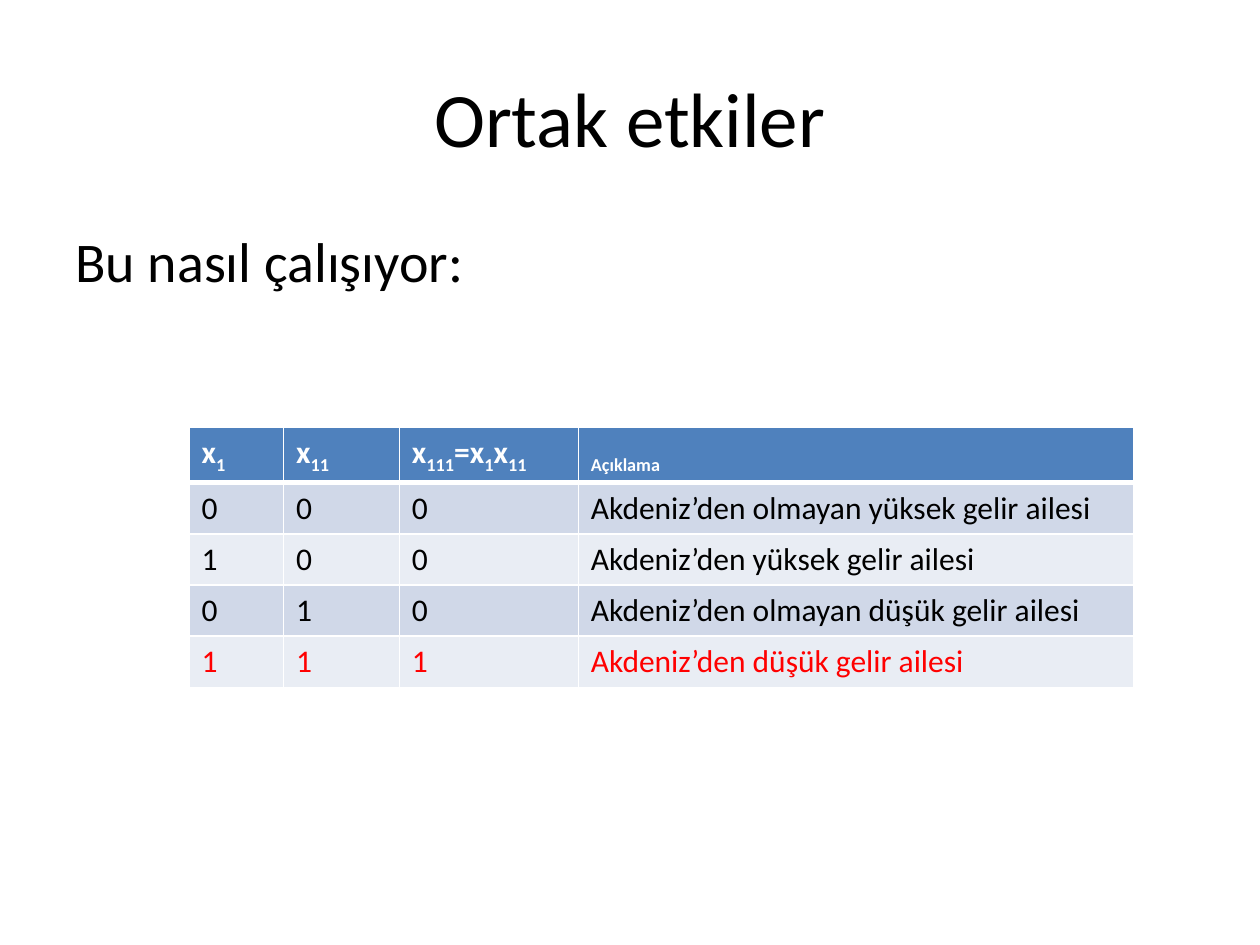
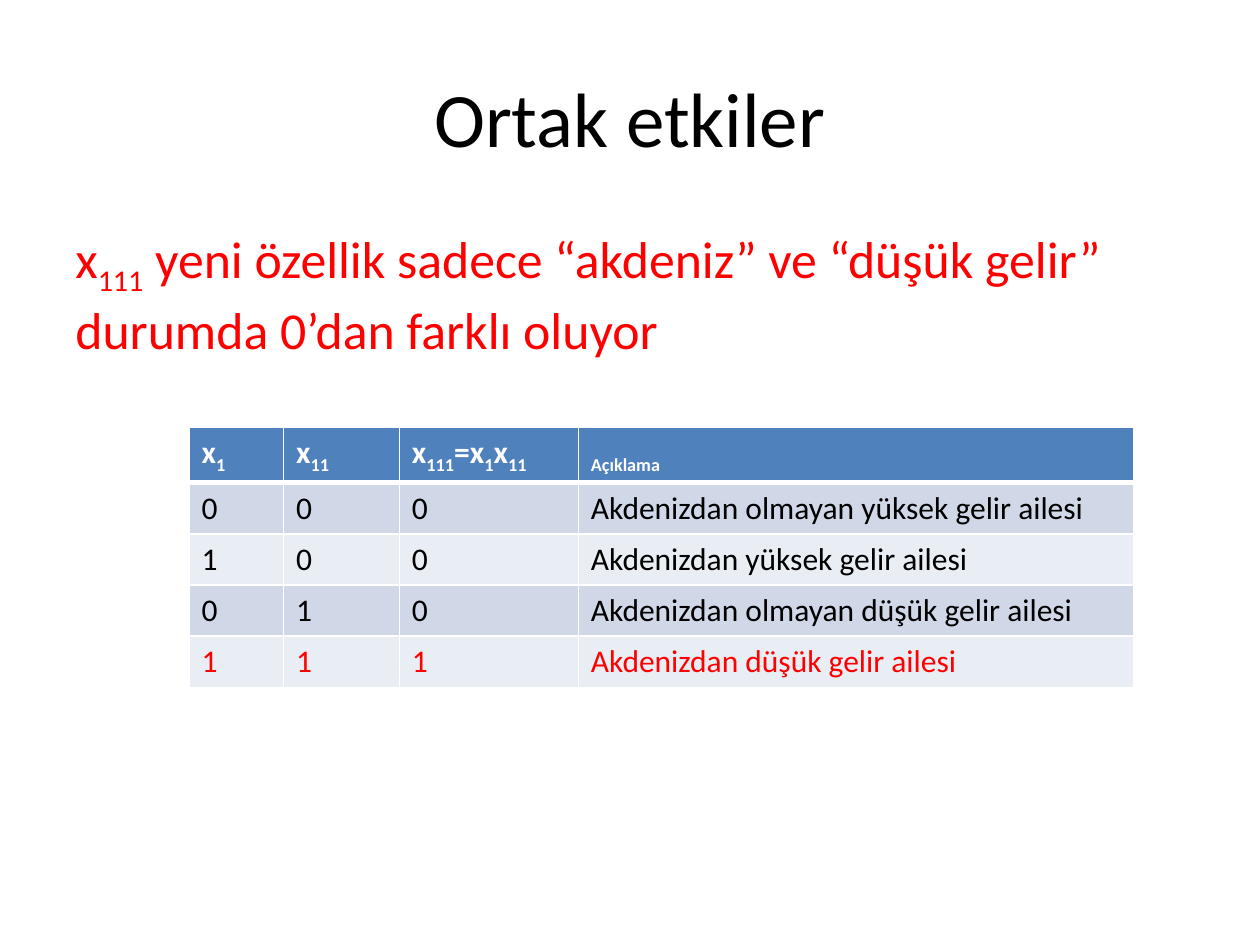
from dataclasses import dataclass

from pptx import Presentation
from pptx.dml.color import RGBColor as Rgb
from pptx.enum.text import MSO_ANCHOR as Anchor, PP_ALIGN as Align
from pptx.oxml import parse_xml
from pptx.oxml.ns import nsdecls
from pptx.util import Inches, Pt


@dataclass(frozen=True)
class Theme:
    font: str = "Calibri"
    black: str = "000000"
    white: str = "FFFFFF"
    red: str = "FF0000"
    head: str = "4F81BD"
    bands: tuple = ("D0D8E8", "E9EDF4")
    title: float = 44
    lead: float = 32
    note: float = 29.6
    cell: float = 18
    thin: float = 1
    thick: float = 3


T = Theme()

# Boxes: left, top, width, height in inches
TITLE = (0.5, 0.3, 9, 1.25)
LEAD = (0.5, 1.75, 9, 4.95)
NOTE = (0.5, 1.75, 9, 1)
GRID = (1.5, 3.39, 7.5, 2.03)
COLS = (0.75, 0.92, 1.42)  # the last column takes the rest

# An underscore switches subscript on and off
HEADS = ("x_1", "x_11", "x_111_=x_1_x_11", "_Açıklama")
FLAGS = ((0, 0), (1, 0), (0, 1), (1, 1))
GROUPS = ("olmayan yüksek", "yüksek", "olmayan düşük", "düşük")


def write(para, text, size, color, bold=False):
    """Fill a paragraph, setting every second piece as subscript."""
    for i, piece in enumerate(text.split("_")):
        if not piece:
            continue
        run = para.add_run()
        run.text = piece
        font = run.font
        font.name, font.size, font.bold = T.font, Pt(size), bold
        font.color.rgb = Rgb.from_string(color)
        if i % 2:
            run._r.get_or_add_rPr().set("baseline", "-25000")


def add_title(slide, box, text):
    shape = slide.shapes.title
    shape.left, shape.top, shape.width, shape.height = map(Inches, box)
    frame = shape.text_frame
    frame.vertical_anchor = Anchor.MIDDLE
    para = frame.paragraphs[0]
    para.alignment = Align.CENTER
    write(para, text, T.title, T.black)


def add_body(slide, box, text, size, color):
    frame = slide.shapes.add_textbox(*map(Inches, box)).text_frame
    frame.word_wrap = True
    para = frame.paragraphs[0]
    para.space_before = Pt(round(size * 0.2, 1))
    write(para, text, size, color)


def edge(cell, top, bottom):
    """Draw the white borders of a cell."""
    props = cell._tc.get_or_add_tcPr()
    for side, width in zip("LRTB", (T.thin, T.thin, top, bottom)):
        props.append(parse_xml(
            f'<a:ln{side} {nsdecls("a")} w="{Pt(width)}"><a:solidFill>'
            f'<a:srgbClr val="{T.white}"/></a:solidFill></a:ln{side}>'))


def add_grid(slide, box, origin):
    rows = [HEADS]
    for (x, y), group in zip(FLAGS, GROUPS):
        rows.append((str(x), str(y), str(x * y),
                     f"{origin} {group} gelir ailesi"))
    table = slide.shapes.add_table(
        len(rows), len(HEADS), *map(Inches, box)).table
    widths = (*COLS, box[2] - sum(COLS))
    for col, width in zip(table.columns, widths):
        col.width = Inches(width)
    for r, texts in enumerate(rows):
        table.rows[r].height = Inches(box[3] / len(rows))
        head = r == 0
        fill = T.head if head else T.bands[(r - 1) % 2]
        color = T.white if head else T.black
        if r == len(rows) - 1:
            color = T.red
        for c, text in enumerate(texts):
            cell = table.cell(r, c)
            edge(cell, T.thick if r == 1 else T.thin,
                 T.thick if head else T.thin)
            cell.fill.solid()
            cell.fill.fore_color.rgb = Rgb.from_string(fill)
            write(cell.text_frame.paragraphs[0], text, T.cell, color, head)


def add_slide(deck, box, text, size, color, origin):
    slide = deck.slides.add_slide(deck.slide_layouts[5])
    add_title(slide, TITLE, "Ortak etkiler")
    add_body(slide, box, text, size, color)
    add_grid(slide, GRID, origin)


def main():
    deck = Presentation()
    deck.slide_width, deck.slide_height = Inches(10), Inches(7.5)
    add_slide(deck, LEAD, "Bu nasıl çalışıyor:", T.lead, T.black,
              "Akdeniz’den")
    add_slide(deck, NOTE,
              "x_111_ yeni özellik sadece “akdeniz” ve “düşük gelir” "
              "durumda 0’dan farklı oluyor", T.note, T.red, "Akdenizdan")
    deck.save("out.pptx")


if __name__ == "__main__":
    main()
